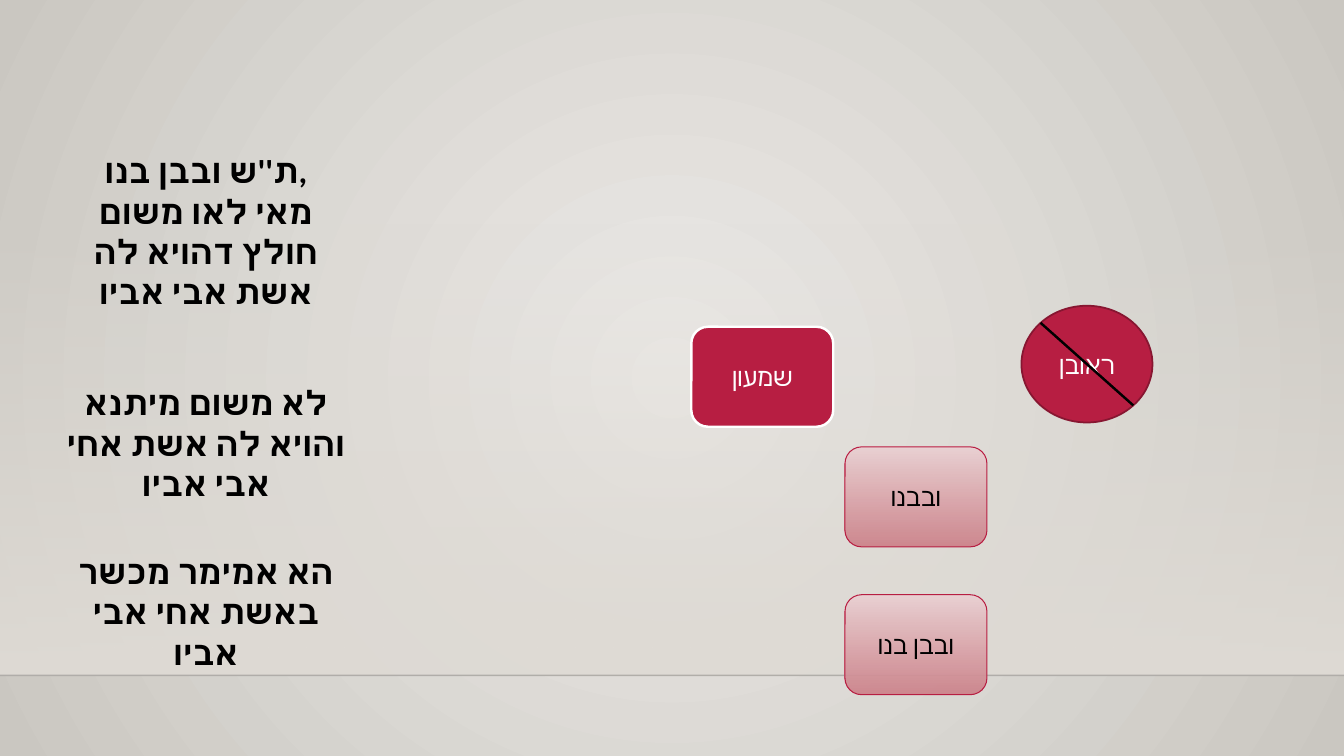
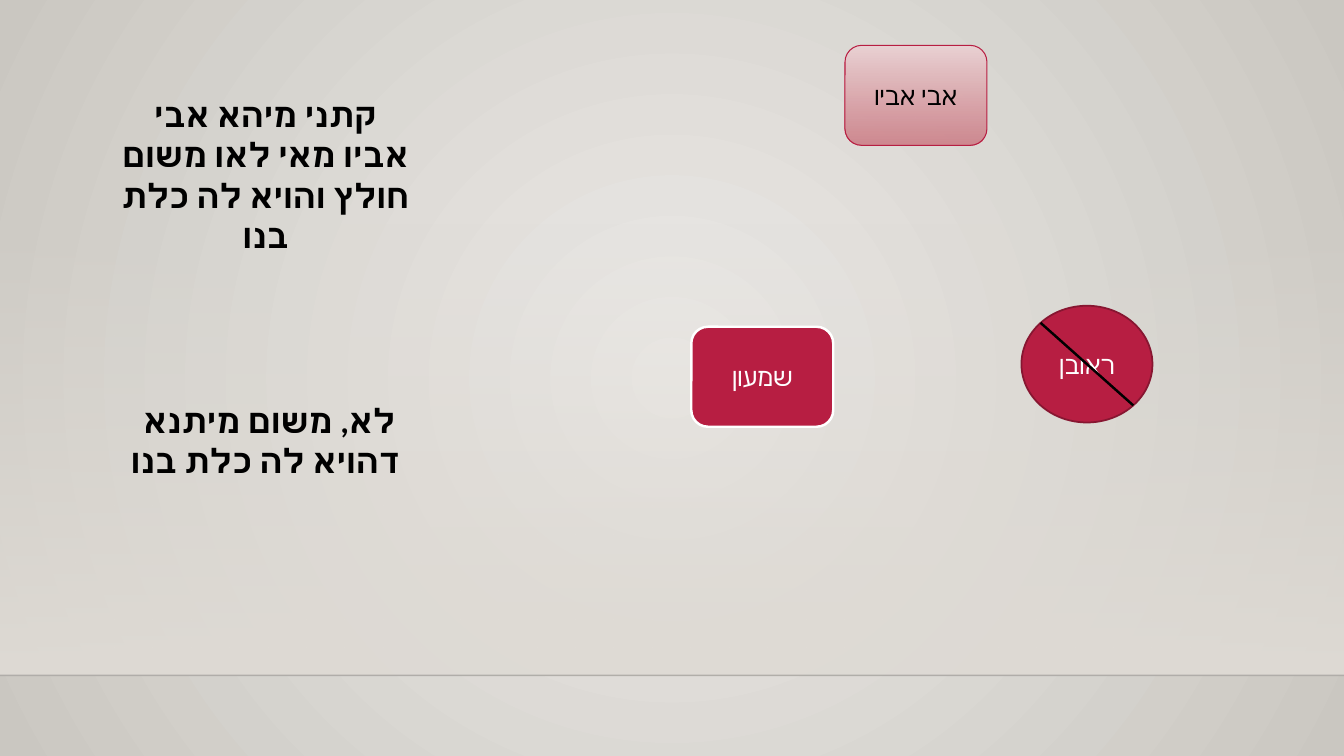
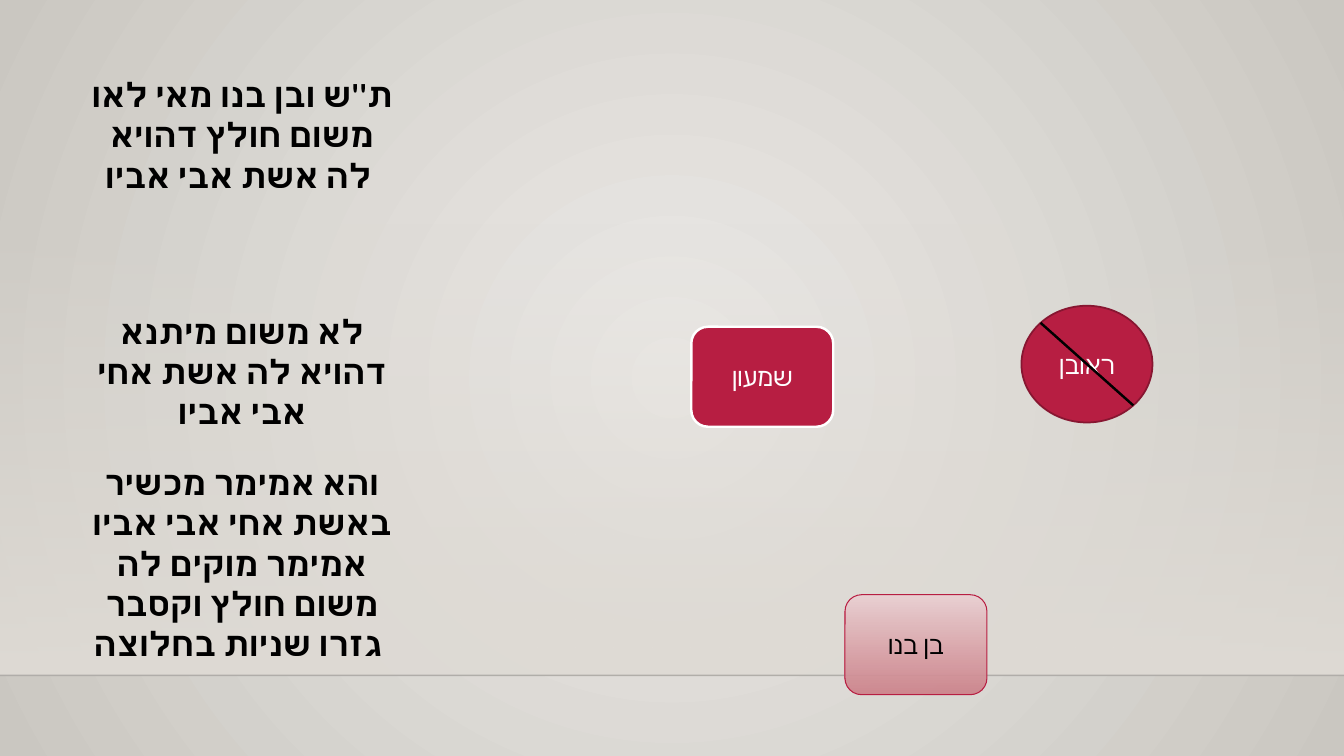
"""Build three slides that diagram family relations beside the Hebrew discussion."""

import math
from dataclasses import dataclass

import pptx
import pptx.dml.color
import pptx.enum.dml
import pptx.enum.shapes
import pptx.enum.text
import pptx.oxml.ns
import pptx.presentation
import pptx.shapes.autoshape
import pptx.shapes.base
import pptx.shapes.connector
import pptx.slide
import pptx.text.text
import pptx.util
from lxml import etree

RGBColor = pptx.dml.color.RGBColor
qn = pptx.oxml.ns.qn
SHAPES = pptx.enum.shapes.MSO_SHAPE

BACKGROUND_CENTER = RGBColor(0xEC, 0xEA, 0xE7)
BACKGROUND_EDGE = RGBColor(0xCA, 0xC7, 0xC1)
WALL = RGBColor(0xDF, 0xDB, 0xD5)
HORIZON = RGBColor(0x00, 0x00, 0x01)
CRIMSON = RGBColor(0xB7, 0x1E, 0x42)
DARK_CRIMSON = RGBColor(0x87, 0x16, 0x31)
PALE_PINK = RGBColor(0xEA, 0xD1, 0xD3)
ROSE = RGBColor(0xCD, 0x82, 0x8A)
BLACK = RGBColor(0, 0, 0)
WHITE = RGBColor(0xFF, 0xFF, 0xFF)

FONT = "Calibri"
SLIDE_WIDTH = pptx.util.Inches(13.33)
SLIDE_HEIGHT = pptx.util.Inches(7.5)
COLUMNS, ROWS = 160, 90
WALL_TOP, WALL_BOTTOM = 26.5, 80.4
RELATIVE_LEFT = 100.6
BOX_WIDTH, BOX_HEIGHT = 16.9, 11.9


@dataclass(frozen=True)
class Area:
    left: float
    top: float
    width: float
    height: float


@dataclass(frozen=True)
class Relative:
    name: str
    top: float


@dataclass(frozen=True)
class Passage:
    top: float
    height: float
    paragraphs: tuple[str, ...]


@dataclass(frozen=True)
class Scene:
    passage_left: float
    passage_width: float
    passages: tuple[Passage, ...]
    relatives: tuple[Relative, ...]


BROTHER_AREA = Area(82.3, 38.9, BOX_WIDTH, BOX_HEIGHT)
DECEASED_AREA = Area(121.6, 36.4, 15.6, 13.9)

SCENES = (
    Scene(
        5.9,
        37.2,
        (
            Passage(17.3, 20.6, ("ת''ש ובבן בנו,", "מאי לאו משום חולץ דהויא לה אשת אבי אביו")),
            Passage(44.9, 10.9, ("לא משום מיתנא והויא לה אשת אחי אבי אביו",)),
            Passage(65, 10.9, ("הא אמימר מכשר באשת אחי אבי אביו",)),
        ),
        (Relative("ובבנו", 53.2), Relative("ובבן בנו", 70.8)),
    ),
    Scene(
        13,
        37.2,
        (
            Passage(10.6, 15.7, ("קתני מיהא אבי אביו מאי לאו משום חולץ והויא לה כלת בנו",)),
            Passage(47, 10.9, (" לא, משום מיתנא דהויא לה כלת בנו",)),
        ),
        (Relative("אבי אביו", 5.4),),
    ),
    Scene(
        8.8,
        40,
        (
            Passage(8.2, 15.7, ("ת''ש ובן בנו מאי לאו משום חולץ דהויא לה אשת אבי אביו ",)),
            Passage(36.4, 10.9, ("לא משום מיתנא דהויא לה אשת אחי אבי אביו",)),
            Passage(
                54.4,
                25.4,
                ("והא אמימר מכשיר באשת אחי אבי אביו אמימר מוקים לה משום חולץ וקסבר גזרו שניות בחלוצה ",),
            ),
        ),
        (Relative("בן בנו", 70.8),),
    ),
)


def across(columns: float) -> int:
    return round(SLIDE_WIDTH * columns / COLUMNS)


def down(rows: float) -> int:
    return round(SLIDE_HEIGHT * rows / ROWS)


def place(area: Area) -> tuple[int, int, int, int]:
    return across(area.left), down(area.top), across(area.width), down(area.height)


def set_alpha(color: etree._Element, percent: int) -> None:
    etree.SubElement(color, qn("a:alpha"), val=str(percent * 1000))


def set_gradient(fill: pptx.dml.fill.FillFormat, first: RGBColor, last: RGBColor) -> None:
    fill.gradient()
    fill.gradient_angle = 270
    for stop, color, position in zip(fill.gradient_stops, (first, last), (0, 1)):
        stop.color.rgb = color
        stop.position = position


def set_gradient_alpha(shape: pptx.shapes.base.BaseShape, first: int, last: int) -> None:
    gradient = shape.element.find(".//" + qn("a:gradFill"))
    for color, percent in zip(gradient.iter(qn("a:srgbClr")), (first, last)):
        set_alpha(color, percent)


def set_master_background(presentation: pptx.presentation.Presentation) -> None:
    master = presentation.slide_master
    set_gradient(master.background.fill, BACKGROUND_CENTER, BACKGROUND_EDGE)
    gradient = master.element.find(".//" + qn("a:gradFill"))
    circle = etree.Element(qn("a:path"), {"path": "circle"})
    etree.SubElement(circle, qn("a:fillToRect"), dict.fromkeys("ltrb", "50000"))
    gradient.replace(gradient.find(qn("a:lin")), circle)


def write(
    shape: pptx.shapes.base.BaseShape,
    paragraphs: tuple[str, ...],
    size: int,
    color: RGBColor,
    bold: bool = False,
) -> None:
    frame = shape.text_frame
    frame.word_wrap = True
    frame.text = "\n".join(paragraphs)
    for paragraph in frame.paragraphs:
        paragraph.alignment = pptx.enum.text.PP_ALIGN.CENTER
        paragraph.font.size = pptx.util.Pt(size)
        paragraph.font.bold = bold
        paragraph.font.name = FONT
        paragraph.font.color.rgb = color
    for properties in shape.element.iter(qn("a:defRPr")):
        etree.SubElement(properties, qn("a:cs"), typeface=FONT)


def add_figure(
    slide: pptx.slide.Slide, kind: SHAPES, area: Area, line: RGBColor | None = None, width: float = 0
) -> pptx.shapes.autoshape.Shape:
    shape = slide.shapes.add_shape(kind, *place(area))
    shape.shadow.inherit = False
    if line is None:
        shape.line.fill.background()
    else:
        shape.line.color.rgb = line
        shape.line.width = pptx.util.Pt(width)
    return shape


def add_line(
    slide: pptx.slide.Slide, area: Area, color: RGBColor, width: float
) -> pptx.shapes.connector.Connector:
    line = slide.shapes.add_connector(
        pptx.enum.shapes.MSO_CONNECTOR.STRAIGHT,
        across(area.left),
        down(area.top),
        across(area.left + area.width),
        down(area.top + area.height),
    )
    line.line.color.rgb = color
    line.line.width = pptx.util.Pt(width)
    etree.SubElement(line.element.spPr, qn("a:effectLst"))
    return line


def add_backdrop(slide: pptx.slide.Slide) -> None:
    wall = add_figure(slide, SHAPES.RECTANGLE, Area(0, WALL_TOP, COLUMNS, WALL_BOTTOM - WALL_TOP))
    set_gradient(wall.fill, WALL, WALL)
    set_gradient_alpha(wall, 0, 100)
    horizon = add_line(slide, Area(0, WALL_BOTTOM, COLUMNS, 0), HORIZON, 1)
    set_alpha(horizon.element.find(".//" + qn("a:srgbClr")), 20)


def add_relative(slide: pptx.slide.Slide, relative: Relative) -> None:
    area = Area(RELATIVE_LEFT, relative.top, BOX_WIDTH, BOX_HEIGHT)
    box = add_figure(slide, SHAPES.ROUNDED_RECTANGLE, area, CRIMSON, 0.75)
    set_gradient(box.fill, PALE_PINK, ROSE)
    set_gradient_alpha(box, 100, 92)
    write(box, (relative.name,), 18, BLACK)


def add_brothers(slide: pptx.slide.Slide) -> None:
    brother = add_figure(slide, SHAPES.ROUNDED_RECTANGLE, BROTHER_AREA, WHITE, 1.75)
    deceased = add_figure(slide, SHAPES.OVAL, DECEASED_AREA, DARK_CRIMSON, 1.25)
    for shape, name in ((brother, "שמעון"), (deceased, "ראובן")):
        shape.fill.solid()
        shape.fill.fore_color.rgb = CRIMSON
        write(shape, (name,), 18, WHITE)
    span = math.sqrt(0.5)
    inset = (1 - span) / 2
    slash = Area(
        DECEASED_AREA.left + DECEASED_AREA.width * inset,
        DECEASED_AREA.top + DECEASED_AREA.height * inset,
        DECEASED_AREA.width * span,
        DECEASED_AREA.height * span,
    )
    add_line(slide, slash, BLACK, 1.75)


def add_scene(presentation: pptx.presentation.Presentation, scene: Scene) -> None:
    slide = presentation.slides.add_slide(presentation.slide_layouts.get_by_name("Blank"))
    add_backdrop(slide)
    for relative in scene.relatives:
        add_relative(slide, relative)
    add_brothers(slide)
    for passage in scene.passages:
        area = Area(scene.passage_left, passage.top, scene.passage_width, passage.height)
        box = slide.shapes.add_textbox(*place(area))
        write(box, passage.paragraphs, 24, BLACK, bold=True)
        box.text_frame.auto_size = pptx.enum.text.MSO_AUTO_SIZE.SHAPE_TO_FIT_TEXT


def main() -> None:
    presentation = pptx.Presentation()
    presentation.slide_width = SLIDE_WIDTH
    presentation.slide_height = SLIDE_HEIGHT
    set_master_background(presentation)
    for scene in SCENES:
        add_scene(presentation, scene)
    presentation.save("out.pptx")


if __name__ == "__main__":
    main()
